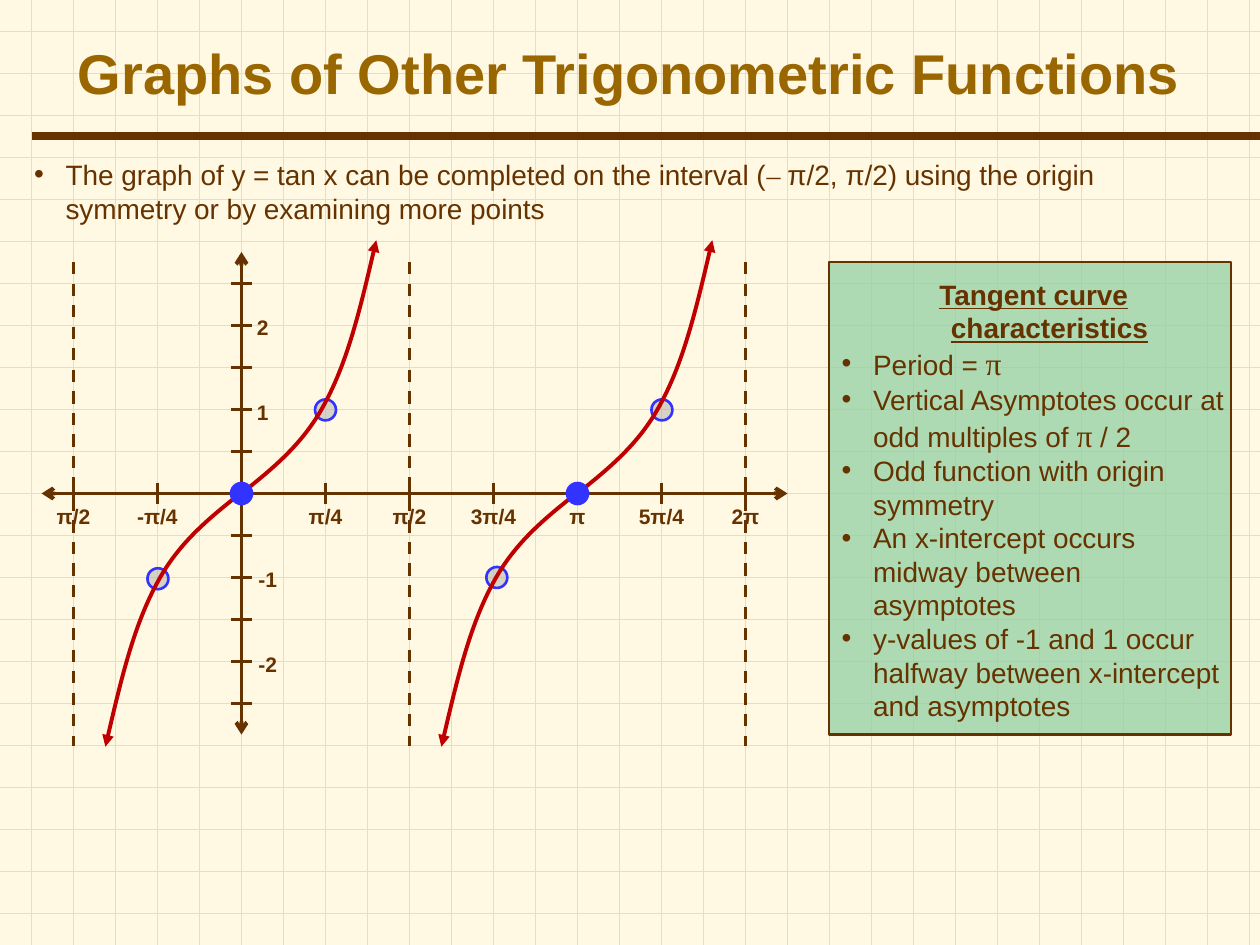
from dataclasses import dataclass

from lxml import etree
from pptx import Presentation
from pptx.dml.color import RGBColor
from pptx.enum.dml import MSO_LINE
from pptx.enum.shapes import MSO_CONNECTOR, MSO_SHAPE
from pptx.enum.text import MSO_ANCHOR, MSO_AUTO_SIZE, PP_ALIGN
from pptx.oxml.ns import qn
from pptx.util import Inches, Pt


@dataclass(frozen=True)
class Theme:
    paper: RGBColor = RGBColor.from_string("FFF8E2")
    grid: RGBColor = RGBColor.from_string("DDDDDD")
    ink: RGBColor = RGBColor.from_string("663300")
    heading: RGBColor = RGBColor.from_string("996600")
    curve: RGBColor = RGBColor.from_string("C00000")
    marker: RGBColor = RGBColor.from_string("3333FF")
    marker_fill: RGBColor = RGBColor.from_string("A6A6A6")
    panel: RGBColor = RGBColor.from_string("92D0A4")
    font: str = "Arial"
    symbol_font: str = "Times New Roman"
    title_size: Pt = Pt(32)
    body_size: Pt = Pt(16)
    symbol_size: Pt = Pt(18)
    label_size: Pt = Pt(12)


theme = Theme()
presentation = Presentation()
presentation.slide_width, presentation.slide_height = Inches(10), Inches(7.5)
slide = presentation.slides.add_slide(presentation.slide_layouts[3])
shapes = slide.shapes
title, intro, traits = slide.placeholders
slide.background.fill.solid()
slide.background.fill.fore_color.rgb = theme.paper


def add_line(x1, y1, x2, y2, color, width, arrows=()):
    line = shapes.add_connector(MSO_CONNECTOR.STRAIGHT, Inches(x1), Inches(y1), Inches(x2), Inches(y2))
    line.line.color.rgb = color
    line.line.width = Pt(width)
    for end in arrows:
        etree.SubElement(line.line._get_or_add_ln(), qn(end), type="arrow")
    etree.SubElement(line._element.spPr, qn("a:effectLst"))
    return line


def add_figure(kind, left, top, width, height, fill, outline, opacity=100):
    figure = shapes.add_shape(kind, Inches(left), Inches(top), Inches(width), Inches(height))
    figure.shadow.inherit = False
    figure.fill.solid()
    figure.fill.fore_color.rgb = fill
    if opacity < 100:
        color = figure._element.spPr.find(qn("a:solidFill"))[0]
        etree.SubElement(color, qn("a:alpha"), val=str(opacity * 1000))
    figure.line.color.rgb = outline
    figure.line.width = Pt(1.5)


# Graph paper and rule under the title, kept on the slide master
backdrop = [add_line(0, 0.25 + row / 3, 10, 0.25 + row / 3, theme.grid, 1) for row in range(22)]
backdrop += [add_line(0.25 + column / 3, 0, 0.25 + column / 3, 7.5, theme.grid, 1) for column in range(30)]
backdrop.append(add_line(0.25, 1.08, 10, 1.08, theme.ink, 4.5))
for line in backdrop:
    slide.slide_layout.slide_master.shapes._spTree.append(line._element)

# Title
title.left, title.top, title.width, title.height = map(Inches, (0.16, 0.14, 9.67, 0.86))
title.text_frame.text = "Graphs of Other Trigonometric Functions"
title.text_frame.auto_size = MSO_AUTO_SIZE.NONE
title.text_frame.vertical_anchor = MSO_ANCHOR.MIDDLE
title_paragraph = title.text_frame.paragraphs[0]
title_paragraph.alignment = PP_ALIGN.CENTER
title_font = title_paragraph.runs[0].font
title_font.name, title_font.size, title_font.bold = theme.font, theme.title_size, True
title_font.color.rgb = theme.heading

# Panel behind the characteristics
add_figure(MSO_SHAPE.RECTANGLE, 6.58, 2.08, 3.19, 3.75, theme.panel, theme.ink, 75)

# Introduction and characteristics; runs at odd positions are in the symbol font
intro_lines = [["The graph of y = tan x can be completed on the interval (", "– ",
                "π/2, π/2) using the origin symmetry or by examining more points"]]
trait_lines = [
    ["Tangent curve characteristics"],
    ["Period = ", "π"],
    ["Vertical Asymptotes occur at odd multiples of ", "π", " / 2"],
    ["Odd function with origin symmetry"],
    ["An x-intercept occurs midway between asymptotes"],
    ["y-values of -1 and 1 occur halfway between x-intercept and asymptotes"],
]
for holder, lines, place, right_inset, symbol_size in (
    (intro, intro_lines, (0.17, 1.25, 9.67, 0.54), 0.25, theme.body_size),
    (traits, trait_lines, (6.58, 2.2, 3.25, 3.09), 0.1, theme.symbol_size),
):
    shapes._spTree.append(holder._element)
    holder.left, holder.top, holder.width, holder.height = map(Inches, place)
    frame = holder.text_frame
    frame.auto_size = MSO_AUTO_SIZE.NONE
    frame.vertical_anchor = MSO_ANCHOR.TOP
    frame.margin_top = frame.margin_bottom = 0
    frame.margin_left, frame.margin_right = Inches(0.1), Inches(right_inset)
    for number, parts in enumerate(lines):
        paragraph = frame.add_paragraph() if number else frame.paragraphs[0]
        paragraph.space_before = Pt(0)
        properties = paragraph._p.get_or_add_pPr()
        properties.set("marL", str(Inches(0.25)))
        properties.set("indent", str(Inches(-0.25)))
        is_heading = lines is trait_lines and number == 0
        if is_heading:
            paragraph.alignment = PP_ALIGN.CENTER
            etree.SubElement(properties, qn("a:buNone"))
        else:
            etree.SubElement(properties, qn("a:buFont"), typeface=theme.font)
            etree.SubElement(properties, qn("a:buChar"), char="•")
        for position, part in enumerate(parts):
            run = paragraph.add_run()
            run.text = part
            is_symbol = position % 2 == 1
            run.font.name = theme.symbol_font if is_symbol else theme.font
            run.font.size = symbol_size if is_symbol else theme.body_size
            run.font.color.rgb = theme.ink
            if is_heading:
                run.font.bold = run.font.underline = True

# Axes, with a step of π/4 across and a half unit up
origin_x, origin_y, step, unit = 23 / 12, 47 / 12, 2 / 3, 2 / 3
tick = dot_radius = 1 / 12
both_ends = ("a:headEnd", "a:tailEnd")
add_line(origin_x, 2, origin_x, 5.83, theme.ink, 2.25, both_ends)
add_line(0.33, origin_y, 6.25, origin_y, theme.ink, 2.25, both_ends)
for half in (-5, -4, -3, -2, -1, 1, 2, 3, 4, 5):
    y = origin_y - half * unit / 2
    add_line(origin_x - tick, y, origin_x + tick, y, theme.ink, 1.5)

# Tick labels: text, left, top, width
labels = [("-1", 2, 4.5, 0.25), ("-2", 2, 5.17, 0.25), ("1", 2, 3.17, 0.17), ("2", 2, 2.5, 0.17)]
for quarter, name in {-2: "π/2", -1: "-π/4", 1: "π/4", 2: "π/2", 3: "3π/4", 4: "π", 5: "5π/4", 6: "2π"}.items():
    x = origin_x + quarter * step
    add_line(x, origin_y - tick, x, origin_y + tick, theme.ink, 1.5)
    width = 0.5 if quarter in (3, 5) else 0.33
    labels.append((name, x - width / 2, 4, width))
for name, left, top, width in labels:
    label = shapes.add_textbox(Inches(left), Inches(top), Inches(width), Inches(0.2)).text_frame
    label.text = name
    label.word_wrap = True
    label.margin_left = label.margin_right = label.margin_top = label.margin_bottom = 0
    label.paragraphs[0].alignment = PP_ALIGN.CENTER
    label_font = label.paragraphs[0].runs[0].font
    label_font.name, label_font.size, label_font.bold = theme.font, theme.label_size, True
    label_font.color.rgb = theme.ink

# Asymptotes
for quarter in (-2, 2, 6):
    x = origin_x + quarter * step
    add_line(x, 2.08, x, 5.92, theme.ink, 1.75).line.dash_style = MSO_LINE.DASH

# Points at y = 1 and y = -1
for left, top in ((2.5, 3.17), (1.17, 4.51), (5.17, 3.17), (3.86, 4.5)):
    add_figure(MSO_SHAPE.OVAL, left, top, 2 * dot_radius, 2 * dot_radius, theme.marker_fill, theme.marker, 45)

# Tangent branches: two Bézier arcs away from each x-intercept, mirrored
arc_points = [(0.25, 0.2), (0.5, 0.4), (0.67, 0.73), (0.85, 1.07), (0.96, 1.54), (1.07, 2.01)]
for center_x in (origin_x + 4 * step, origin_x):
    for direction, start_x in ((-1, center_x - 0.01), (1, center_x)):
        builder = shapes.build_freeform(Inches(start_x), Inches(origin_y))
        builder.add_line_segments(
            [(Inches(start_x + direction * dx), Inches(origin_y - direction * dy)) for dx, dy in arc_points],
            close=False)
        branch = builder.convert_to_shape()
        outline = next(branch._element.iter(qn("a:path")))
        segments = outline.findall(qn("a:lnTo"))
        for first in (0, 3):
            arc = etree.SubElement(outline, qn("a:cubicBezTo"))
            for segment in segments[first:first + 3]:
                arc.append(segment[0])
                outline.remove(segment)
        branch.shadow.inherit = False
        branch.fill.background()
        branch.line.color.rgb = theme.curve
        branch.line.width = Pt(2.25)
        etree.SubElement(branch.line._get_or_add_ln(), qn("a:tailEnd"), type="triangle")
    add_figure(MSO_SHAPE.OVAL, center_x - dot_radius, origin_y - dot_radius, 2 * dot_radius, 2 * dot_radius,
               theme.marker, theme.marker)

presentation.save("out.pptx")
